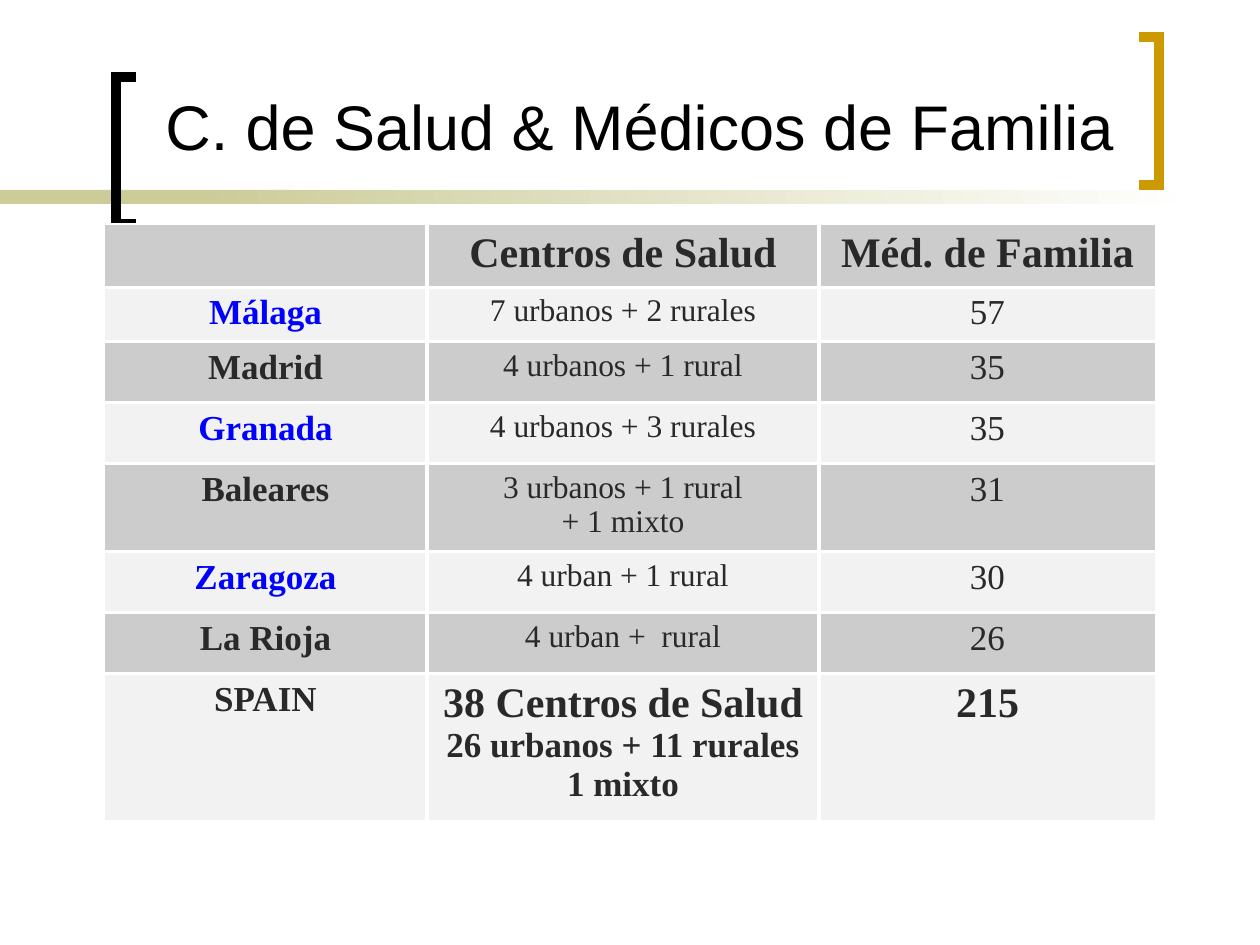
from lxml.etree import SubElement
from pptx import Presentation
from pptx.dml.color import RGBColor
from pptx.enum.shapes import MSO_SHAPE
from pptx.enum.text import MSO_ANCHOR, PP_ALIGN
from pptx.oxml.ns import qn
from pptx.util import Pt

PX = 914400 / 126
COLORS = {
    "black": "000000", "white": "FFFFFF", "olive": "CCCC99", "gold": "CC9900",
    "text": "292929", "blue": "0000FF", "dark": "CCCCCC", "light": "F2F2F2",
}

# Content
TITLE = "C. de Salud & Médicos de Familia"
HEADERS = ["", "Centros de Salud", "Méd. de Familia"]
# place, name colour, lines on health centres, family doctors
PLACES = [
    ("Málaga", "blue", ["7 urbanos + 2 rurales"], "57"),
    ("Madrid", "text", ["4 urbanos + 1 rural"], "35"),
    ("Granada", "blue", ["4 urbanos + 3 rurales"], "35"),
    ("Baleares", "text", ["3 urbanos + 1 rural", "+ 1 mixto"], "31"),
    ("Zaragoza", "blue", ["4 urban + 1 rural"], "30"),
    ("La Rioja", "text", ["4 urban +  rural"], "26"),
]
TOTAL = ("SPAIN", ["38 Centros de Salud", "26 urbanos + 11 rurales", "1 mixto"], "215")

# Layout in px
TABLE_LEFT, TABLE_TOP = 104, 224
COLUMN_WIDTHS = [323, 392, 337]
ROW_HEIGHTS = [63, 54, 61, 61, 88, 61, 61, 147]
BRACKETS = [
    ("black", [(136, 224), (116, 224), (116, 77), (136, 77)]),
    ("gold", [(1139, 37), (1159, 37), (1159, 185), (1139, 185)]),
]


def emu(*lengths):
    return [round(length * PX) for length in lengths]


def rgb(name):
    return RGBColor.from_string(COLORS[name])


def add_run(paragraph, text, size, font="Times New Roman", color="text", bold=False):
    run = paragraph.add_run()
    run.text = text
    run.font.name = font
    run.font.size = Pt(size)
    run.font.bold = bold
    run.font.color.rgb = rgb(color)


def add_bar(slide, left, width):
    bar = slide.shapes.add_shape(MSO_SHAPE.RECTANGLE, *emu(left, 190, width, 14))
    bar.shadow.inherit = False
    bar.line.fill.background()
    return bar


def add_bracket(slide, color, points):
    builder = slide.shapes.build_freeform(*points[0], scale=PX)
    builder.add_line_segments(points[1:], close=False)
    bracket = builder.convert_to_shape()
    bracket.shadow.inherit = False
    bracket.fill.background()
    bracket.line.color.rgb = rgb(color)
    bracket.line.width = Pt(6)
    SubElement(bracket.line._ln, qn("a:miter"), lim="800000")


def add_borders(cell, sides):
    properties = cell._tc.get_or_add_tcPr()
    for side in sides:
        line = SubElement(properties, qn(f"a:ln{side}"), w=str(Pt(2)))
        fill = SubElement(line, qn("a:solidFill"))
        SubElement(fill, qn("a:srgbClr"), val=COLORS["white"])


def fill_cell(cell, lines):
    """Each line is (text, size, colour, bold) and becomes one paragraph."""
    frame = cell.text_frame
    for index, (text, size, color, bold) in enumerate(lines):
        paragraph = frame.add_paragraph() if index else frame.paragraphs[0]
        paragraph.alignment = PP_ALIGN.CENTER
        if text:
            add_run(paragraph, text, size, color=color, bold=bold)


def table_rows():
    rows = [[[(header, 24, "text", True)] for header in HEADERS]]
    for name, color, centres, doctors in PLACES:
        rows.append([
            [(name, 20, color, True)],
            [(line, 18, "text", False) for line in centres],
            [(doctors, 20, "text", False)],
        ])
    name, centres, doctors = TOTAL
    rows.append([
        [(name, 20, "text", True)],
        [(line, 20 if index else 24, "text", True) for index, line in enumerate(centres)],
        [(doctors, 24, "text", True)],
    ])
    return rows


def add_table(slide):
    rows = table_rows()
    last_row, last_column = len(rows) - 1, len(HEADERS) - 1
    table = slide.shapes.add_table(
        len(rows), len(HEADERS),
        *emu(TABLE_LEFT, TABLE_TOP, sum(COLUMN_WIDTHS), sum(ROW_HEIGHTS))).table
    for column, width in zip(table.columns, emu(*COLUMN_WIDTHS)):
        column.width = width
    for row, height in zip(table.rows, emu(*ROW_HEIGHTS)):
        row.height = height
    for r, row in enumerate(rows):
        for c, lines in enumerate(row):
            cell = table.cell(r, c)
            fill_cell(cell, lines)
            # White rules between cells only
            inner = {"L": c > 0, "R": c < last_column, "T": r > 0, "B": r < last_row}
            add_borders(cell, [side for side, drawn in inner.items() if drawn])
            cell.fill.solid()
            cell.fill.fore_color.rgb = rgb("light" if r % 2 else "dark")


def main():
    presentation = Presentation()
    presentation.slide_width, presentation.slide_height = emu(1260, 945)
    slide = presentation.slides.add_slide(presentation.slide_layouts[6])

    # Bar fading out to the right
    solid_bar = add_bar(slide, 0, 294)
    solid_bar.fill.solid()
    solid_bar.fill.fore_color.rgb = rgb("olive")
    fading_bar = add_bar(slide, 199, 998)
    fading_bar.fill.gradient()
    fading_bar.fill.gradient_angle = 0
    for stop, color in zip(fading_bar.fill.gradient_stops, ["olive", "white"]):
        stop.color.rgb = rgb(color)

    # Brackets around the title
    for color, points in BRACKETS:
        add_bracket(slide, color, points)

    # Title
    frame = slide.shapes.add_textbox(*emu(134, -24, 1012, 195)).text_frame
    frame.word_wrap = True
    frame.vertical_anchor = MSO_ANCHOR.BOTTOM
    paragraph = frame.paragraphs[0]
    paragraph.alignment = PP_ALIGN.RIGHT
    add_run(paragraph, TITLE, 36, "Arial", "black")
    add_run(paragraph, " ", 40, "Arial", "black")

    add_table(slide)
    presentation.save("out.pptx")


if __name__ == "__main__":
    main()
